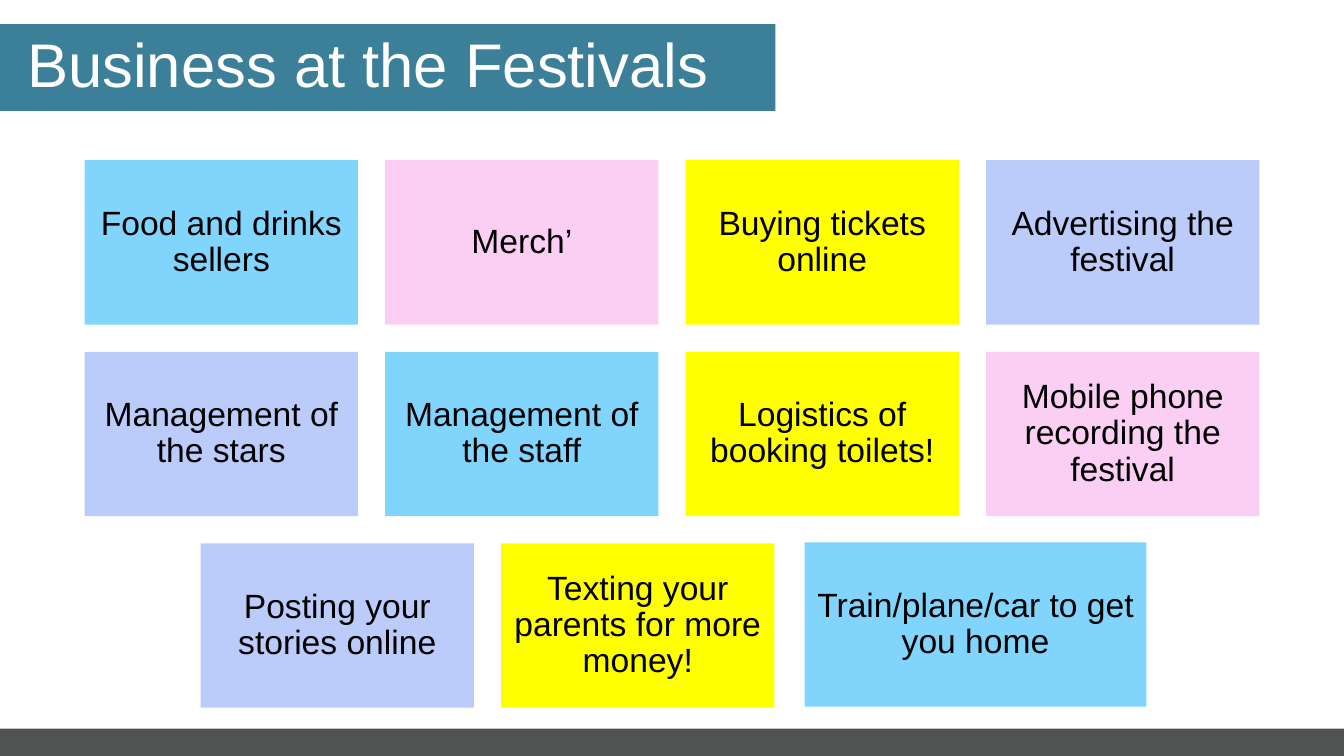
import pptx
import pptx.util
import pptx.dml.color
import pptx.enum.shapes
import pptx.enum.text
import pptx.shapes.autoshape
import pptx.slide
from dataclasses import dataclass

Inches = pptx.util.Inches
ALIGN = pptx.enum.text.PP_ALIGN

HUES = {
    "teal": "3C7F98",
    "grey": "515352",
    "sky": "81D5FD",
    "pink": "FBCFF3",
    "yellow": "FFFF00",
    "lilac": "BCCCFA",
    "black": "000000",
    "white": "FFFFFF",
}
WIDE, HIGH = 2.71, 1.63
STEP = 2.98


@dataclass
class Card:
    text: str
    hue: str


@dataclass
class Row:
    left: float
    top: float
    cards: list[Card]


ROWS = [
    Row(0.84, 1.59, [
        Card("Food and drinks sellers", "sky"),
        Card("Merch’", "pink"),
        Card("Buying tickets online", "yellow"),
        Card("Advertising the festival", "lilac"),
    ]),
    Row(0.84, 3.49, [
        Card("Management of the stars", "lilac"),
        Card("Management of the staff", "sky"),
        Card("Logistics of booking toilets!", "yellow"),
        Card("Mobile phone recording the festival", "pink"),
    ]),
    Row(1.99, 5.39, [
        Card("Posting your stories online", "lilac"),
        Card("Texting your parents for more money!", "yellow"),
    ]),
]
HOME = Card("Train/plane/car to get you home", "sky")


def color(hue: str) -> pptx.dml.color.RGBColor:
    return pptx.dml.color.RGBColor.from_string(HUES[hue])


def add_rect(slide: pptx.slide.Slide, left: float, top: float, width: float,
             height: float, hue: str) -> pptx.shapes.autoshape.Shape:
    rect = slide.shapes.add_shape(
        pptx.enum.shapes.MSO_SHAPE.RECTANGLE,
        Inches(left), Inches(top), Inches(width), Inches(height))
    rect.shadow.inherit = False
    rect.fill.solid()
    rect.fill.fore_color.rgb = color(hue)
    rect.line.fill.background()
    return rect


def set_text(shape: pptx.shapes.autoshape.Shape, text: str, size: int,
             hue: str, align: ALIGN, inset: float) -> None:
    frame = shape.text_frame
    frame.text = text
    frame.word_wrap = True
    frame.auto_size = pptx.enum.text.MSO_AUTO_SIZE.NONE
    frame.vertical_anchor = pptx.enum.text.MSO_ANCHOR.MIDDLE
    frame.margin_left = Inches(inset)
    frame.margin_right = frame.margin_top = frame.margin_bottom = Inches(0.1)
    para = frame.paragraphs[0]
    para.alignment = align
    para.line_spacing = 0.9
    para.font.name = "Arial"
    para.font.size = pptx.util.Pt(size)
    para.font.color.rgb = color(hue)


def add_card(slide: pptx.slide.Slide, card: Card, left: float, top: float,
             width: float = WIDE) -> None:
    rect = add_rect(slide, left, top, width, HIGH, card.hue)
    set_text(rect, card.text, 24, "black", ALIGN.CENTER, 0.1)


def add_title(slide: pptx.slide.Slide) -> None:
    title = slide.shapes.title
    title.left, title.top = Inches(0), Inches(0.24)
    title.width, title.height = Inches(7.69), Inches(0.86)
    title.fill.solid()
    title.fill.fore_color.rgb = color("teal")
    set_text(title, "Business at the Festivals", 44, "white", ALIGN.LEFT, 0.27)


def main() -> None:
    deck = pptx.Presentation()
    deck.slide_width, deck.slide_height = Inches(13.33), Inches(7.5)
    slide = deck.slides.add_slide(deck.slide_layouts[5])
    add_title(slide)
    add_rect(slide, 0, 7.23, 13.33, 0.27, "grey")
    for row in ROWS:
        for col, card in enumerate(row.cards):
            add_card(slide, card, row.left + col * STEP, row.top)
    add_card(slide, HOME, 7.98, 5.38, 3.39)
    deck.save("out.pptx")


if __name__ == "__main__":
    main()
